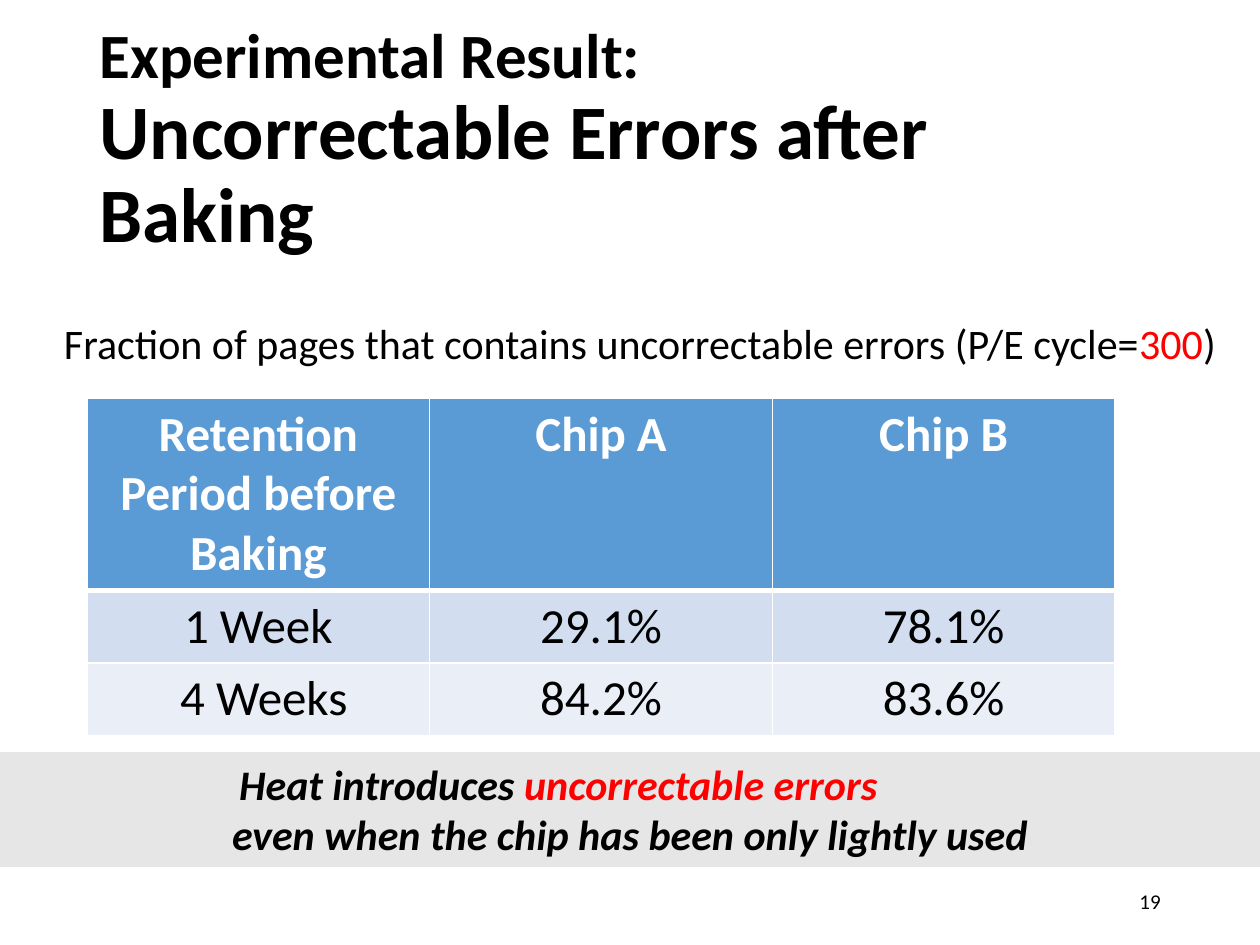
from dataclasses import dataclass

from lxml.etree import SubElement
from pptx import Presentation
from pptx.dml.color import RGBColor as RGB
from pptx.enum.shapes import MSO_SHAPE as SHAPE
from pptx.enum.text import MSO_ANCHOR as ANCHOR, MSO_AUTO_SIZE as AUTO, PP_ALIGN as ALIGN
from pptx.oxml.ns import qn
from pptx.util import Inches, Pt


@dataclass(frozen=True)
class Theme:
    """Colours, font and type sizes of the slide."""
    font: str = "Calibri"
    ink: str = "000000"
    accent: str = "FF0000"
    white: str = "FFFFFF"
    band: str = "E7E6E6"
    header: str = "5B9BD5"
    stripes: tuple = ("D2DEEF", "EAEFF7")
    title: int = 44
    kicker: int = 36
    cell: int = 28
    body: int = 24
    number: int = 12


T = Theme()
WIDTH, HEIGHT = Inches(10), Inches(7.5)
ROWS = (
    ("Retention Period before Baking", "Chip A", "Chip B"),
    ("1 Week", "29.1%", "78.1%"),
    (" 4 Weeks", "84.2%", "83.6%"),
)


def area(left, top, width, height):
    """Turn percentages of the slide into a position and size."""
    return (int(WIDTH * left / 100), int(HEIGHT * top / 100),
            int(WIDTH * width / 100), int(HEIGHT * height / 100))


def style(font, size, color=T.ink, bold=False, italic=False):
    """Format a font."""
    font.name, font.size, font.bold, font.italic = T.font, Pt(size), bold, italic
    font.color.rgb = RGB.from_string(color)


def add_runs(p, parts, size, **look):
    """Append (text, colour) runs to a paragraph."""
    for text, color in parts:
        r = p.add_run()
        r.text = text
        style(r.font, size, color, **look)


def add_title(s, box):
    """Place the two-size title in its placeholder."""
    sp = s.shapes.title
    sp.left, sp.top, sp.width, sp.height = box
    tf = sp.text_frame
    tf.auto_size, tf.vertical_anchor = AUTO.NONE, ANCHOR.MIDDLE
    tf.text = "Experimental Result: \vUncorrectable Errors after Baking"
    p = tf.paragraphs[0]
    p.alignment, p.line_spacing = ALIGN.LEFT, 0.9
    for r, size in zip(p.runs, (T.kicker, T.title)):
        style(r.font, size, bold=True)
    br = p._p.find(qn("a:br"))
    SubElement(br, qn("a:rPr"), sz=str(T.kicker * 100))


def add_caption(s, box):
    """Add the one-line table caption."""
    tf = s.shapes.add_textbox(*box).text_frame
    tf.word_wrap, tf.auto_size = False, AUTO.SHAPE_TO_FIT_TEXT
    parts = (("Fraction of pages that contains uncorrectable errors (P/E cycle=", T.ink),
             ("300", T.accent), (")", T.ink))
    add_runs(tf.paragraphs[0], parts, T.body)


def set_borders(cell, bottom):
    """Draw white cell borders with the given bottom width in points."""
    tcPr = cell._tc.get_or_add_tcPr()
    for i, (side, width) in enumerate((("L", 1), ("R", 1), ("T", 1), ("B", bottom))):
        ln = tcPr.makeelement(qn(f"a:ln{side}"), {"w": str(Pt(width))})
        fill = SubElement(ln, qn("a:solidFill"))
        SubElement(fill, qn("a:srgbClr"), val=T.white)
        tcPr.insert(i, ln)


def add_results(s, box):
    """Add the table of error fractions."""
    table = s.shapes.add_table(len(ROWS), len(ROWS[0]), *box).table
    for row, share in zip(table.rows, (0.57, 0.215, 0.215)):
        row.height = int(box[3] * share)
    for i, texts in enumerate(ROWS):
        head = i == 0
        for j, text in enumerate(texts):
            cell = table.cell(i, j)
            cell.fill.solid()
            fill = T.header if head else T.stripes[(i - 1) % 2]
            cell.fill.fore_color.rgb = RGB.from_string(fill)
            set_borders(cell, 3 if head else 1)
            cell.text = text
            p = cell.text_frame.paragraphs[0]
            p.alignment = ALIGN.CENTER
            style(p.runs[0].font, T.cell, T.white if head else T.ink, bold=head)


def add_takeaway(s, box):
    """Add the full-width band with the conclusion."""
    sp = s.shapes.add_shape(SHAPE.RECTANGLE, *box)
    sp.shadow.inherit = False
    sp.fill.solid()
    sp.fill.fore_color.rgb = RGB.from_string(T.band)
    sp.line.fill.background()
    tf = sp.text_frame
    tf.word_wrap, tf.vertical_anchor = True, ANCHOR.TOP
    tf.auto_size = AUTO.SHAPE_TO_FIT_TEXT
    first, second = tf.paragraphs[0], tf.add_paragraph()
    first.alignment, second.alignment = ALIGN.LEFT, ALIGN.CENTER
    first._p.get_or_add_pPr().set("marL", str(Inches(1.8)))
    look = {"bold": True, "italic": True}
    add_runs(first, (("Heat introduces ", T.ink), ("uncorrectable errors", T.accent)),
             T.body, **look)
    add_runs(second, (("even when the chip has been only lightly used", T.ink),),
             T.body, **look)


def add_number(s, box, number):
    """Add the slide number."""
    tf = s.shapes.add_textbox(*box).text_frame
    tf.word_wrap, tf.vertical_anchor = True, ANCHOR.MIDDLE
    p = tf.paragraphs[0]
    p.alignment = ALIGN.RIGHT
    add_runs(p, ((str(number), T.ink),), T.number)


def main():
    """Build the slide and save it."""
    prs = Presentation()
    prs.slide_width, prs.slide_height = WIDTH, HEIGHT
    s = prs.slides.add_slide(prs.slide_layouts[5])
    add_title(s, area(6.9, 5.33, 86.2, 19.33))
    add_results(s, area(6.9, 42.13, 81.6, 35.07))
    add_number(s, area(70.6, 92.67, 22.5, 5.33), 19)
    add_caption(s, area(4.1, 32.93, 96, 6.67))
    add_takeaway(s, area(0, 79.6, 100, 12.13))
    prs.save("out.pptx")


if __name__ == "__main__":
    main()
